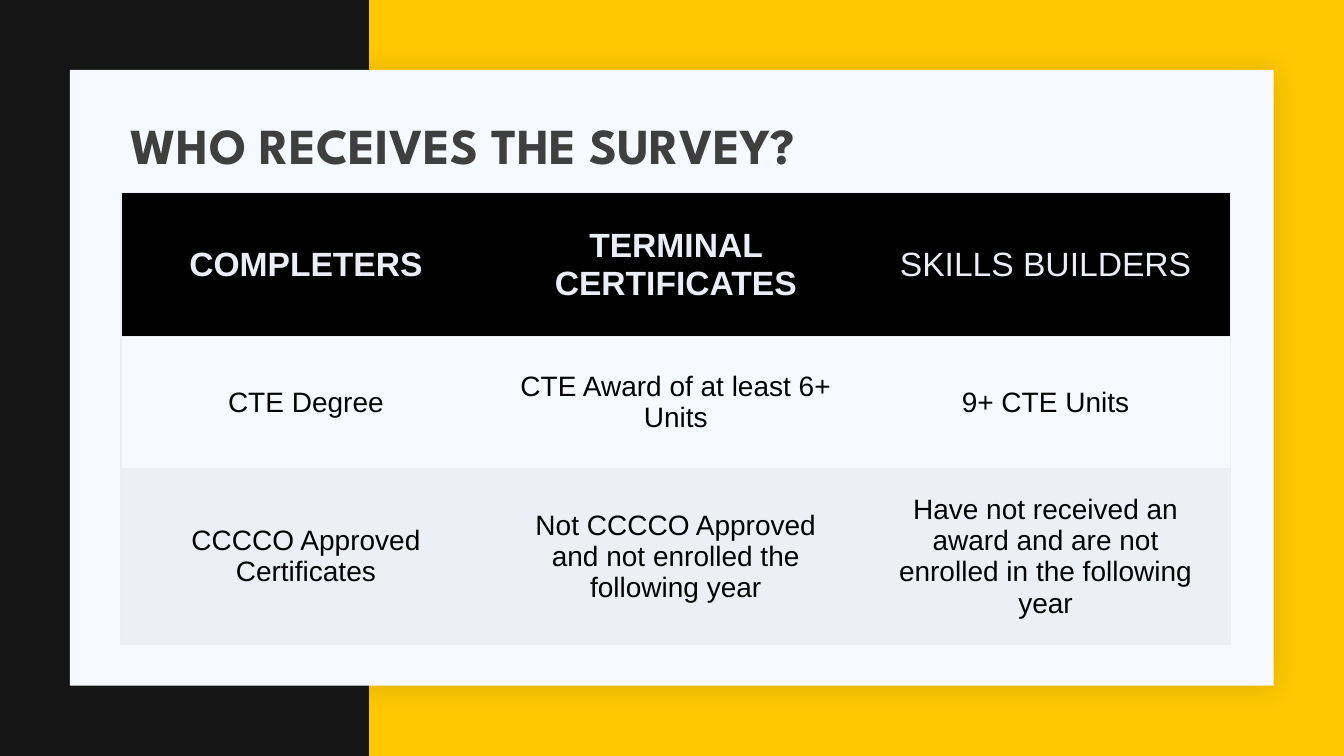
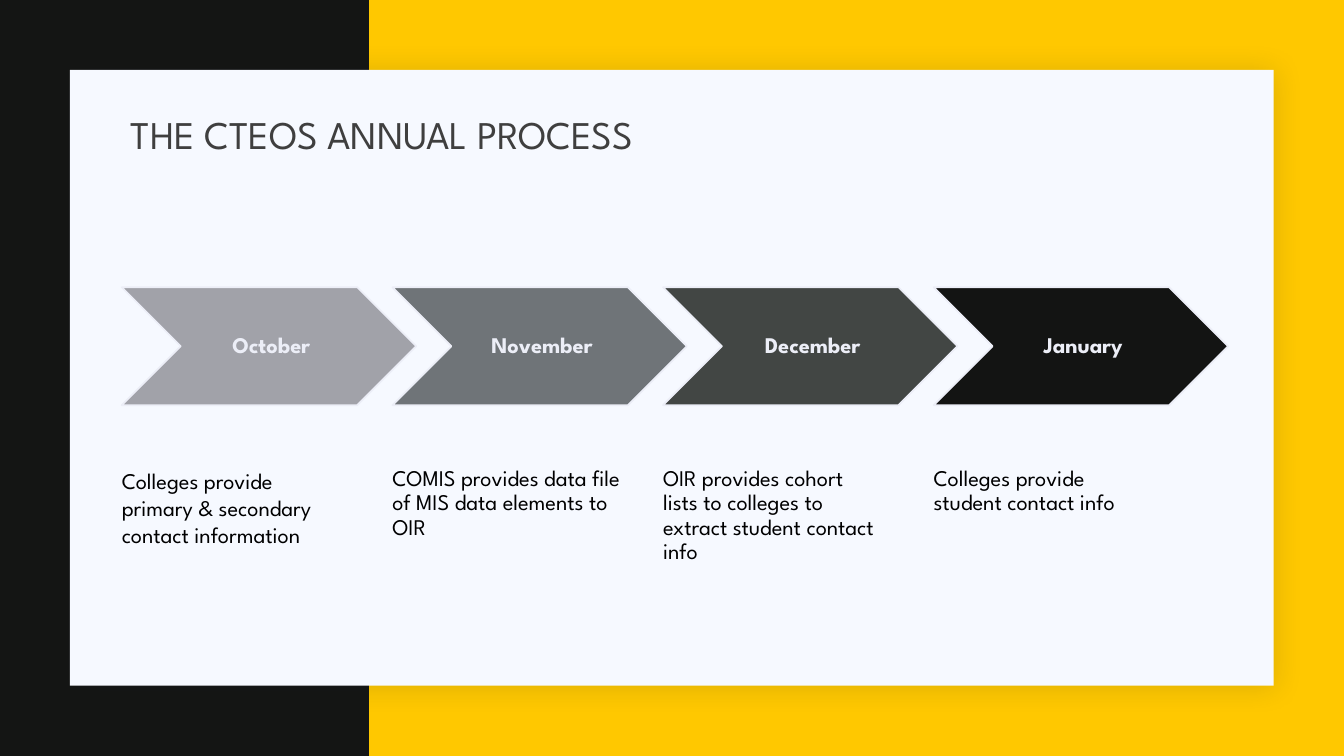
from lxml.etree import SubElement
from pptx import Presentation
from pptx.dml.color import RGBColor
from pptx.enum.shapes import MSO_SHAPE as SHAPE
from pptx.enum.text import MSO_ANCHOR as ANCHOR, MSO_AUTO_SIZE as AUTO, PP_ALIGN as ALIGN
from pptx.oxml import parse_xml
from pptx.oxml.ns import nsdecls, qn
from pptx.util import Cm, Pt

# Content
SURVEY_TITLE = "WHO RECEIVES THE SURVEY?"
SURVEY_ROWS = [
    ["COMPLETERS", "TERMINAL CERTIFICATES", "SKILLS BUILDERS"],
    ["CTE Degree", "CTE Award of at least 6+ Units", "9+ CTE Units"],
    ["CCCCO Approved Certificates",
     "Not CCCCO Approved and not enrolled the following year",
     "Have not received an award and are not enrolled in the following year"],
]
PROCESS_TITLE = "THE CTEOS ANNUAL PROCESS"
# month, chevron colour, description, line spacing, right inset in cm
PROCESS_STEPS = [
    ("October", "step1", "Colleges provide primary & secondary contact information", 1.0, 0.5),
    ("November", "step2", "COMIS provides data file of MIS data elements to OIR", 0.9, 0),
    ("December", "step3",
     "OIR provides cohort lists to colleges to extract student contact info", 0.9, 0.5),
    ("January", "step4", "Colleges provide student contact info", 0.9, 0.5),
]

# Shared style
COLORS = {
    "yellow": "FFC800", "band": "141514", "card": "F6F9FF", "shadow": "1F2125",
    "title": "3F3F3F", "black": "000000", "pale": "ECEEF7", "stripe": "EDEFF7",
    "step1": "A1A2A9", "step2": "6F7478", "step3": "424644", "step4": "131413",
}
HEAD_FONT, TABLE_FONT = "League Spartan", "Arial"
LEFT = 3.05


def rgb(name):
    return RGBColor.from_string(COLORS[name])


def add_box(s, kind, box, color):
    sp = s.shapes.add_shape(kind, *(Cm(v) for v in box))
    sp.shadow.inherit = False
    sp.fill.solid()
    sp.fill.fore_color.rgb = rgb(color)
    sp.line.fill.background()
    return sp


def set_text(tf, text, size, color, font=HEAD_FONT, bold=False, align=ALIGN.LEFT, spacing=0.9):
    p = tf.paragraphs[0]
    p.alignment = align
    p.line_spacing = spacing
    r = p.add_run()
    r.text = text
    r.font.name, r.font.size, r.font.bold = font, Pt(size), bold
    r.font.color.rgb = rgb(color)


def set_frame(tf, insets, anchor):
    tf.word_wrap, tf.auto_size = True, AUTO.NONE
    tf.vertical_anchor = anchor
    tf.margin_left, tf.margin_top, tf.margin_right, tf.margin_bottom = (Cm(v) for v in insets)


def add_backdrop(layout, s):
    """Draw the band and card on a slide, then move them into its layout."""
    layout.background.fill.solid()
    layout.background.fill.fore_color.rgb = rgb("yellow")
    band = add_box(s, SHAPE.RECTANGLE, (0, 0, 9.3, 19.05), "band")
    card = add_box(s, SHAPE.RECTANGLE, (1.76, 1.76, 30.34, 15.52), "card")
    effects = card._element.spPr.find(qn("a:effectLst"))
    effects.append(parse_xml(
        f'<a:outerShdw {nsdecls("a")} blurRad="{Pt(20)}" dist="{Pt(2)}" dir="2700000">'
        f'<a:srgbClr val="{COLORS["shadow"]}"><a:alpha val="14000"/></a:srgbClr></a:outerShdw>'))
    for i, sp in enumerate((band, card)):
        layout.shapes._spTree.insert(2 + i, sp._element)


def add_title(s, text, height, size, bold):
    title = s.shapes.title
    title.left, title.top, title.width, title.height = Cm(LEFT), Cm(2.62), Cm(27.94), Cm(height)
    set_frame(title.text_frame, (0.25, 0.13, 0.25, 0.13), ANCHOR.MIDDLE)
    set_text(title.text_frame, text, size, "title", bold=bold)


def set_borders(cell, sides):
    """Rule the given sides (of L, R, T, B) and clear the others."""
    tc_pr = cell._tc.get_or_add_tcPr()
    for i, side in enumerate("LRTB"):
        ln = SubElement(tc_pr, qn(f"a:ln{side}"), w=str(Pt(1)))
        if side in sides:
            fill = SubElement(ln, qn("a:solidFill"))
            SubElement(fill, qn("a:srgbClr"), val=COLORS["pale"])
        else:
            SubElement(ln, qn("a:noFill"))
        tc_pr.insert(i, ln)


def build_survey(s):
    add_title(s, SURVEY_TITLE, 2.21, 36, True)
    col_width, heights = 9.32, [3.62, 3.33, 4.42]
    fills = ["black", "card", "stripe"]
    cols = len(SURVEY_ROWS[0])
    table = s.shapes.add_table(len(SURVEY_ROWS), cols, Cm(LEFT), Cm(4.86),
                               Cm(col_width * cols), Cm(sum(heights))).table
    for col in table.columns:
        col.width = Cm(col_width)
    for r, row in enumerate(SURVEY_ROWS):
        table.rows[r].height = Cm(heights[r])
        head = r == 0
        for c, text in enumerate(row):
            cell = table.cell(r, c)
            cell.fill.solid()
            cell.fill.fore_color.rgb = rgb(fills[r])
            cell.vertical_anchor = ANCHOR.MIDDLE
            cell.margin_left = cell.margin_right = Cm(0.64)
            cell.margin_top = cell.margin_bottom = Cm(0.64)
            set_text(cell.text_frame, text, 24 if head else 20, "pale" if head else "black",
                     TABLE_FONT, head and c < cols - 1, ALIGN.CENTER, 1.0)
            set_borders(cell, "TB" + "L" * (c == 0) + "R" * (c == cols - 1))


def build_process(s):
    add_title(s, PROCESS_TITLE, 1.63, 28, False)
    pitch = 6.82
    for i, (month, color, text, spacing, right) in enumerate(PROCESS_STEPS):
        x = 3.07 + i * pitch
        # Month chevron
        chevron = add_box(s, SHAPE.CHEVRON, (x, 7.24, 7.42, 2.97), color)
        chevron.line.color.rgb = rgb("pale")
        chevron.line.width = Pt(1.25)
        set_frame(chevron.text_frame, (0.18, 0.06, 0.06, 0.06), ANCHOR.MIDDLE)
        set_text(chevron.text_frame, month, 16, "pale", bold=True, align=ALIGN.CENTER)
        # Description below
        note = s.shapes.add_textbox(Cm(x), Cm(10.59), Cm(5.94), Cm(4.32))
        set_frame(note.text_frame, (0, 1.19, right, 0), ANCHOR.TOP)
        set_text(note.text_frame, text, 16, "black", spacing=spacing)


def main():
    prs = Presentation()
    prs.slide_width, prs.slide_height = Cm(33.87), Cm(19.05)
    layout = prs.slide_layouts.get_by_name("Title Only")
    survey, process = (prs.slides.add_slide(layout) for _ in range(2))
    add_backdrop(layout, survey)
    build_survey(survey)
    build_process(process)
    prs.save("out.pptx")


if __name__ == "__main__":
    main()
